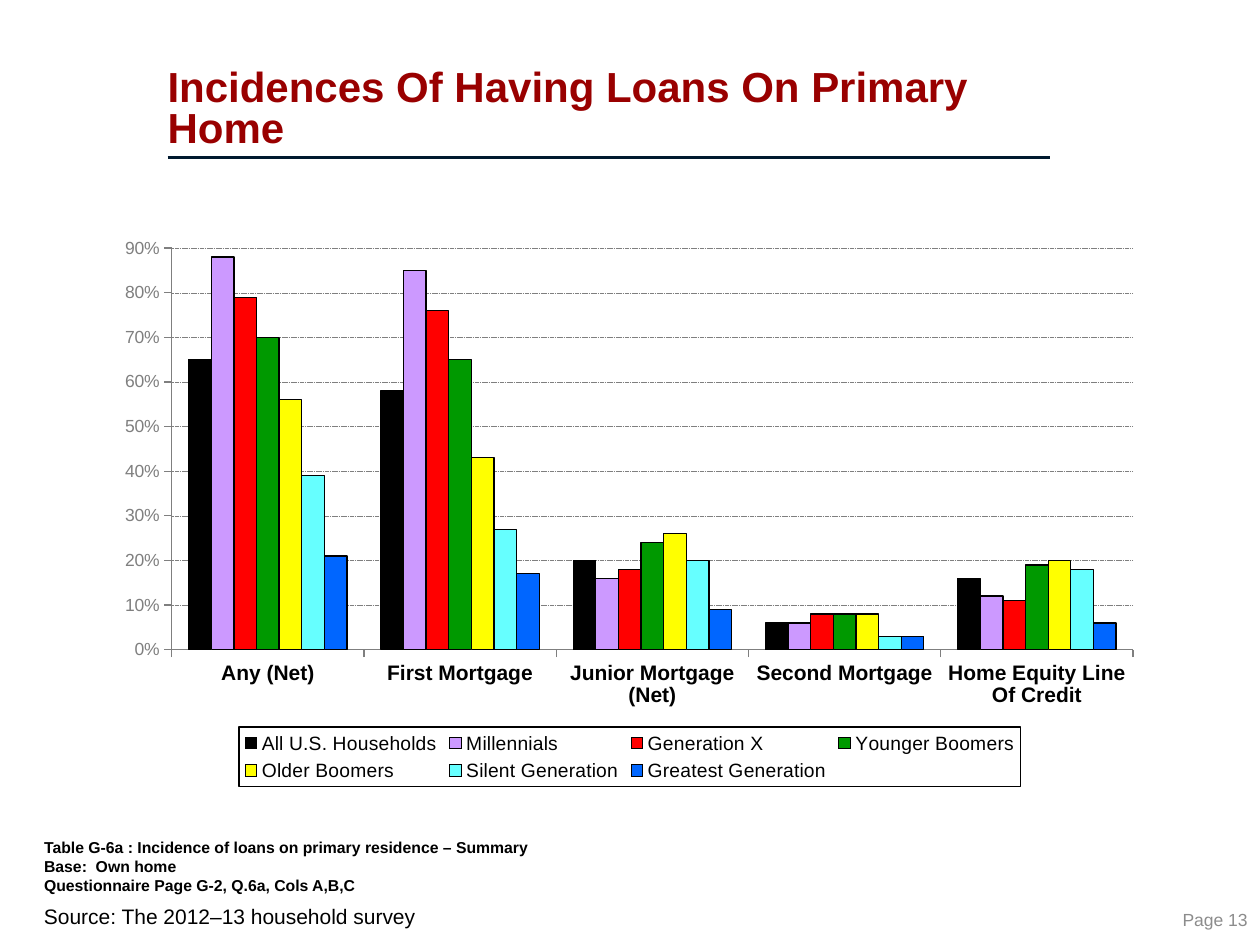
from lxml import etree
from pptx import Presentation
from pptx.chart.data import CategoryChartData
from pptx.dml.color import RGBColor
from pptx.enum.chart import XL_CHART_TYPE, XL_LEGEND_POSITION, XL_TICK_MARK
from pptx.enum.dml import MSO_LINE
from pptx.enum.text import MSO_ANCHOR, PP_ALIGN
from pptx.oxml import parse_xml
from pptx.oxml.ns import qn
from pptx.util import Inches, Pt

COLUMNS = XL_CHART_TYPE.COLUMN_CLUSTERED
BOTTOM = XL_LEGEND_POSITION.BOTTOM
OUTSIDE = XL_TICK_MARK.OUTSIDE
DASH = MSO_LINE.SQUARE_DOT
LOW, MIDDLE = MSO_ANCHOR.BOTTOM, MSO_ANCHOR.MIDDLE
LEFT, RIGHT = PP_ALIGN.LEFT, PP_ALIGN.RIGHT
FONT, GRAY = "Arial", "7F7F7F"
TITLE = "Incidences Of Having Loans On Primary Home"
NOTE = "\v".join([
    "Table G-6a : Incidence of loans on primary residence – Summary",
    "Base:  Own home",
    "Questionnaire Page G-2, Q.6a, Cols A,B,C",
])
SOURCE = "Source: The 2012–13 household survey"
PAGE = "Page 13"
LOANS = ["Any (Net)", "First Mortgage", "Junior Mortgage (Net)",
         "Second Mortgage", "Home Equity Line Of Credit"]
GROUPS = [
    ("All U.S. Households", "000000", (0.65, 0.58, 0.20, 0.06, 0.16)),
    ("Millennials", "CC99FF", (0.88, 0.85, 0.16, 0.06, 0.12)),
    ("Generation X", "FF0000", (0.79, 0.76, 0.18, 0.08, 0.11)),
    ("Younger Boomers", "009900", (0.70, 0.65, 0.24, 0.08, 0.19)),
    ("Older Boomers", "FFFF00", (0.56, 0.43, 0.26, 0.08, 0.20)),
    ("Silent Generation", "66FFFF", (0.39, 0.27, 0.20, 0.03, 0.18)),
    ("Greatest Generation", "0066FF", (0.21, 0.17, 0.09, 0.03, 0.06)),
]
CHART_NS = 'xmlns:c="http://schemas.openxmlformats.org/drawingml/2006/chart"'
DRAW_NS = 'xmlns:a="http://schemas.openxmlformats.org/drawingml/2006/main"'


def color(code):
    """Turn a hex string into a colour."""
    return RGBColor.from_string(code)


def style(font, size, code="000000", bold=False):
    """Set name, size, colour and weight of a font."""
    font.name, font.size, font.bold = FONT, Pt(size), bold
    font.color.rgb = color(code)


def rule(line, code, width):
    """Set colour and width of a line."""
    line.color.rgb = color(code)
    line.width = Pt(width)


def label(slide, text, box, size, code="000000", bold=False, wrap=False,
          anchor=MSO_ANCHOR.TOP, align=LEFT, inset=(0.1, 0.05)):
    """Add a text box."""
    frame = slide.shapes.add_textbox(*map(Inches, box)).text_frame
    frame.word_wrap, frame.vertical_anchor = wrap, anchor
    frame.margin_left = frame.margin_right = Inches(inset[0])
    frame.margin_top = frame.margin_bottom = Inches(inset[1])
    para = frame.paragraphs[0]
    para.text, para.alignment = text, align
    style(para.font, size, code, bold)


def place(part, index, box, inner=False):
    """Fix a chart part at fractions of the chart's size."""
    for old in part.findall(qn("c:layout")):
        part.remove(old)
    target = '<c:layoutTarget val="inner"/>' if inner else ""
    modes = "".join(f'<c:{k}Mode val="edge"/>' for k in "xy")
    sizes = "".join(f'<c:{k} val="{v}"/>' for k, v in zip("xywh", box))
    part.insert(index, parse_xml(
        f"<c:layout {CHART_NS}><c:manualLayout>{target}{modes}{sizes}"
        "</c:manualLayout></c:layout>"))


def add_title(slide):
    """Fill the title and draw the rule below it."""
    title = slide.shapes.title
    title.left, title.top, title.width, title.height = map(
        Inches, (1.33, 0.08, 7.17, 1.17))
    frame = title.text_frame
    frame.word_wrap, frame.vertical_anchor = True, LOW
    frame.margin_left = frame.margin_right = 0
    frame.margin_top = frame.margin_bottom = Inches(0.05)
    para = frame.paragraphs[0]
    para.text, para.alignment, para.line_spacing = TITLE, LEFT, 0.8
    style(para.font, 24, "990000", True)
    line = slide.shapes.add_connector(1, *map(Inches, (1.33, 1.25, 8.33, 1.25)))
    rule(line.line, "00192F", 2)
    etree.SubElement(line._element.spPr, qn("a:effectLst"))


def add_bars(slide):
    """Add the column chart of loans by generation."""
    data = CategoryChartData(number_format="0%")
    data.categories = LOANS
    for name, _, vals in GROUPS:
        data.add_series(name, vals)
    chart = slide.shapes.add_chart(
        COLUMNS, *map(Inches, (0.83, 1.81, 8.33, 4.44)), data).chart
    chart.has_title = False
    style(chart.font, 10)
    plot = chart.plots[0]
    plot.gap_width, plot.overlap, plot.vary_by_categories = 150, 0, False
    for bars, (_, code, _) in zip(plot.series, GROUPS):
        bars.format.fill.solid()
        bars.format.fill.fore_color.rgb = color(code)
        bars.invert_if_negative = False
        rule(bars.format.line, "000000", 0.75)

    cats, vals = chart.category_axis, chart.value_axis
    for axis in (cats, vals):
        axis.major_tick_mark = OUTSIDE
        rule(axis.format.line, GRAY, 0.75)
    style(cats.tick_labels.font, 12, bold=True)
    style(vals.tick_labels.font, 10, GRAY)
    vals.minimum_scale, vals.maximum_scale, vals.major_unit = 0, 0.9, 0.1
    vals.tick_labels.number_format = "0%"
    vals.tick_labels.number_format_is_linked = False
    grid = vals.major_gridlines.format.line
    rule(grid, GRAY, 0.25)
    grid.dash_style = DASH

    chart.has_legend = True
    legend = chart.legend
    legend.position, legend.include_in_layout = BOTTOM, False
    style(legend.font, 11)
    key = legend._element
    place(key, 1, (0.128, 0.892, 0.745, 0.107))
    key.find(qn("c:overlay")).addnext(parse_xml(
        f'<c:spPr {CHART_NS} {DRAW_NS}><a:ln w="9525"><a:solidFill>'
        '<a:srgbClr val="000000"/></a:solidFill></a:ln></c:spPr>'))
    area = chart._chartSpace.find(".//" + qn("c:plotArea"))
    place(area, 0, (0.064, 0.036, 0.916, 0.718), True)


def main():
    """Build and save the slide."""
    deck = Presentation()
    deck.slide_width, deck.slide_height = Inches(10), Inches(7.5)
    slide = deck.slides.add_slide(deck.slide_layouts[5])
    add_title(slide)
    add_bars(slide)
    label(slide, SOURCE, (0.25, 7.12, 8.58, 0.3), 12, wrap=True)
    label(slide, PAGE, (9.26, 7.16, 0.74, 0.27), 10, "8C8C8C",
          anchor=MIDDLE, align=RIGHT)
    label(slide, NOTE, (0, 6.42, 7.02, 0.81), 9, bold=True,
          anchor=LOW, inset=(0.35, 0.13))
    deck.save("out.pptx")


if __name__ == "__main__":
    main()
